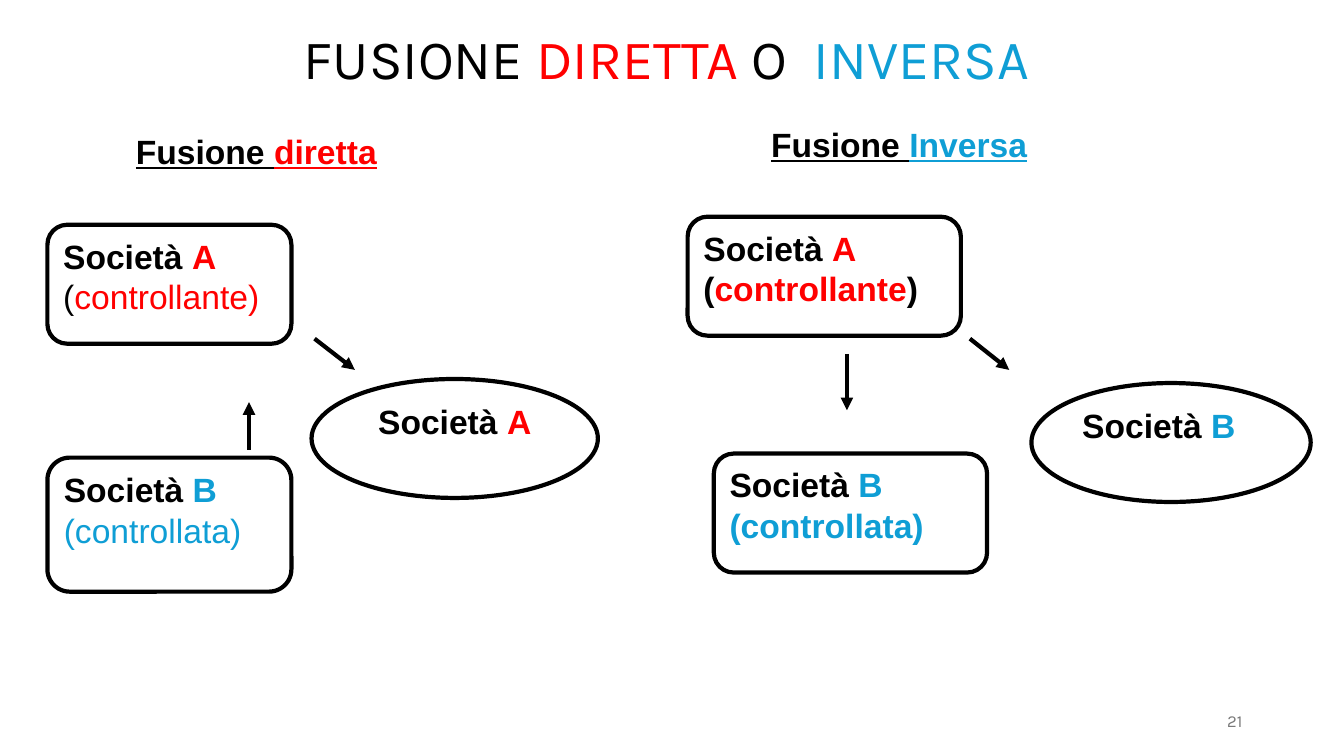
from lxml import etree
from pptx import Presentation
from pptx.dml.color import RGBColor
from pptx.enum.shapes import MSO_CONNECTOR, MSO_SHAPE
from pptx.enum.text import MSO_ANCHOR, PP_ALIGN
from pptx.oxml.ns import qn
from pptx.util import Inches, Pt

ROUNDED, OVAL = MSO_SHAPE.ROUNDED_RECTANGLE, MSO_SHAPE.OVAL
STRAIGHT = MSO_CONNECTOR.STRAIGHT
TOP, MIDDLE = MSO_ANCHOR.TOP, MSO_ANCHOR.MIDDLE
LEFT, CENTER, RIGHT = PP_ALIGN.LEFT, PP_ALIGN.CENTER, PP_ALIGN.RIGHT

COLORS = {"black": "000000", "red": "FF0000", "blue": "0F9ED5", "gray": "797979"}
BODY = {"name": "Arial", "size": Pt(24), "bold": True}
LIGHT = {**BODY, "bold": False}
HEADING = {**BODY, "underline": True}
TITLE = {"name": "Karla", "size": Pt(39.6)}
NUMBER = {"name": "Karla", "size": Pt(12)}
LINE_WIDTH = Pt(3)


def color(name):
    return RGBColor.from_string(COLORS[name])


def write(shape, lines, align=LEFT, anchor=TOP):
    """Fill a shape with lines, each a font format and its (text, color) runs."""
    frame = shape.text_frame
    frame.word_wrap = True
    frame.vertical_anchor = anchor
    for index, (font_format, runs) in enumerate(lines):
        paragraph = frame.add_paragraph() if index else frame.paragraphs[0]
        paragraph.alignment = align
        for text, color_name in runs:
            run = paragraph.add_run()
            run.text = text
            for attribute, value in font_format.items():
                setattr(run.font, attribute, value)
            run.font.color.rgb = color(color_name)


def add_text(slide, box, font_format, runs, align=LEFT, anchor=TOP):
    shape = slide.shapes.add_textbox(*map(Inches, box))
    write(shape, [(font_format, runs)], align, anchor)
    return shape


def add_company(slide, kind, box, lines, align=LEFT):
    shape = slide.shapes.add_shape(kind, *map(Inches, box))
    shape.shadow.inherit = False
    shape.fill.background()
    shape.line.color.rgb = color("black")
    shape.line.width = LINE_WIDTH
    write(shape, lines, align)


def add_arrow(slide, start, end):
    arrow = slide.shapes.add_connector(STRAIGHT, *map(Inches, (*start, *end)))
    arrow.line.color.rgb = color("black")
    arrow.line.width = LINE_WIDTH
    etree.SubElement(arrow.line._get_or_add_ln(), qn("a:tailEnd"), type="triangle")
    etree.SubElement(arrow._element.spPr, qn("a:effectLst"))


def add_title(slide, box):
    runs = [(" FUSIONE ", "black"), ("DIRETTA", "red"), (" O  ", "black"), ("INVERSA", "blue")]
    shape = add_text(slide, box, TITLE, runs, CENTER, MIDDLE)
    shape.text_frame.paragraphs[0].line_spacing = 0.9


def add_merger(slide, origin, merger):
    """Draw one merger; its boxes and arrows are measured from the origin."""
    left, top = origin

    def place(x, y, *size):
        return (left + x, top + y, *size)

    add_text(slide, place(*merger["heading_box"]), HEADING,
             [("Fusione ", "black"), merger["heading"]])
    for box, letter, role in merger["companies"]:
        add_company(slide, ROUNDED, place(*box), [(BODY, [("Società ", "black"), letter]), role])
    add_company(slide, OVAL, place(*merger["result_box"]),
                [(BODY, [("Società ", "black"), merger["result"]])], merger["result_align"])
    for start, end in merger["arrows"]:
        add_arrow(slide, place(*start), place(*end))


COMPANY_A, COMPANY_B = ("A", "red"), ("B", "blue")

DIRECT = {
    "heading": ("diretta", "red"),
    "heading_box": (0.78, 0.1, 2.83, 0.5),
    "companies": [
        ((0, 1.08, 2.42, 1.18), COMPANY_A, (LIGHT, [("(", "black"), ("controllante)", "red")])),
        ((0, 3.39, 2.42, 1.33), COMPANY_B, (LIGHT, [("(controllata)", "blue")])),
    ],
    "result": COMPANY_A,
    "result_box": (2.62, 2.61, 2.84, 1.18),
    "result_align": CENTER,
    "arrows": [((2, 3.31), (2, 2.84)), ((2.65, 2.21), (3.05, 2.52))],
}
INVERSE = {
    "heading": ("Inversa", "blue"),
    "heading_box": (0.73, 0.03, 3.41, 0.5),
    "companies": [
        ((0, 1, 2.71, 1.18), COMPANY_A,
         (BODY, [("(", "black"), ("controllante", "red"), (")", "black")])),
        ((0.26, 3.35, 2.71, 1.18), COMPANY_B, (BODY, [("(controllata)", "blue")])),
    ],
    "result": COMPANY_B,
    "result_box": (3.41, 2.65, 2.77, 1.18),
    "result_align": LEFT,
    "arrows": [((1.58, 2.36), (1.58, 2.92)), ((2.8, 2.21), (3.19, 2.52))],
}


def main():
    presentation = Presentation()
    presentation.slide_width, presentation.slide_height = Inches(13.33), Inches(7.5)
    slide = presentation.slides.add_slide(presentation.slide_layouts[6])
    add_title(slide, (2.41, 0.3, 8.27, 0.62))
    add_merger(slide, (0.47, 1.15), DIRECT)
    add_merger(slide, (6.82, 1.15), INVERSE)
    add_text(slide, (9.42, 6.95, 3, 0.4), NUMBER, [("21", "gray")], RIGHT, MIDDLE)
    presentation.save("out.pptx")


if __name__ == "__main__":
    main()
